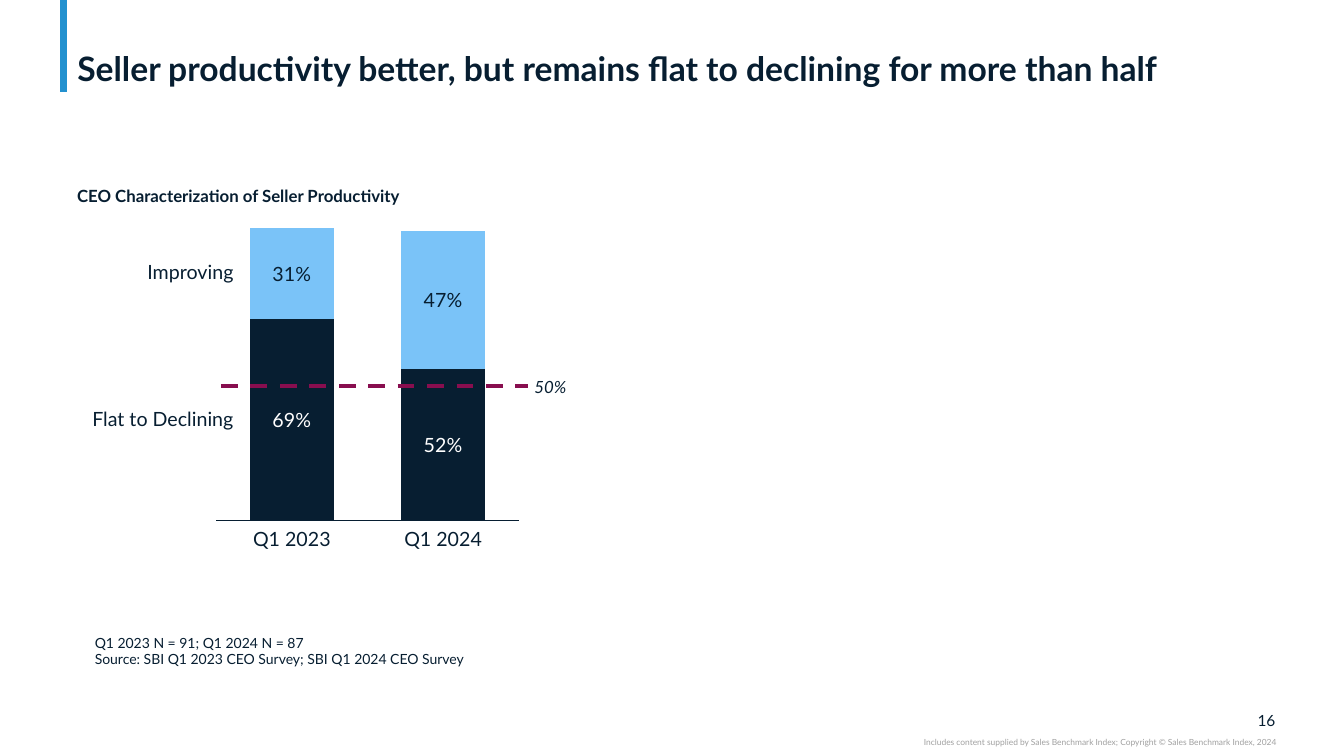
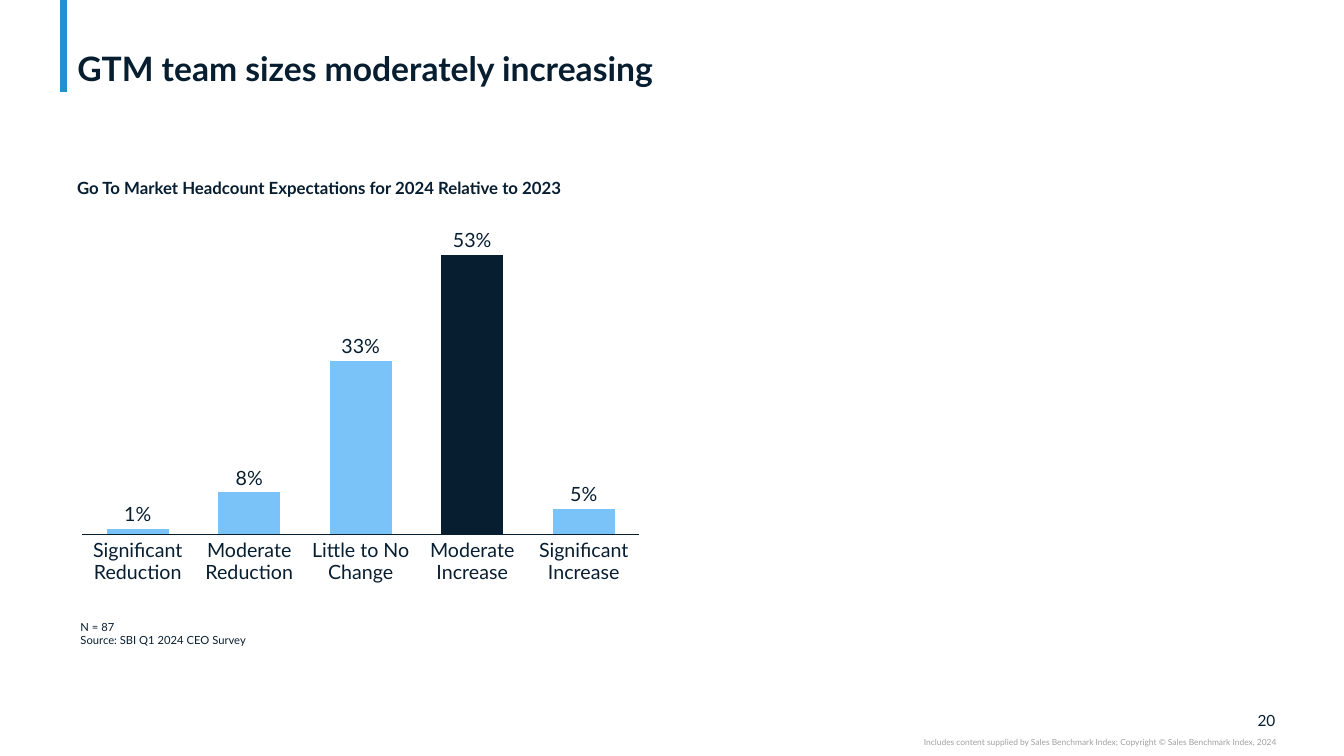
from lxml import etree
from pptx import Presentation, util as u
from pptx.chart import data as chart_data
from pptx.dml.color import RGBColor
from pptx.enum import chart as charts, dml, shapes, text
from pptx.oxml import ns

COLORS = {"ink": "071E31", "sky": "7AC3F8", "band": "2391CF",
          "target": "880E4F", "grey": "A0A0A0", "white": "FFFFFF"}
FONT = "Lato"
LEFT, CENTER, RIGHT = text.PP_ALIGN.LEFT, text.PP_ALIGN.CENTER, text.PP_ALIGN.RIGHT
TOP, MIDDLE, BOTTOM = (text.MSO_ANCHOR.TOP, text.MSO_ANCHOR.MIDDLE,
                       text.MSO_ANCHOR.BOTTOM)

# The slide is a grid of 80 columns and 45 rows of square cells
presentation = Presentation()
presentation.slide_width, presentation.slide_height = u.Inches(13.33), u.Inches(7.5)
CELL = presentation.slide_height / 45
title_layout = presentation.slide_layouts.get_by_name("Title Only")

LABEL = {"size": 14, "spacing": 0.9, "margins": (0, 0)}
HEADING = {"size": 12, "bold": True}


def write(shape, box, lines, size, color="ink", align=LEFT, anchor=TOP,
          margins=(0.1, 0.05), spacing=1.0, bold=False, italic=False):
    """Place a shape on the grid (column, row, columns, rows) and fill in its text."""
    for name, cells in zip(("left", "top", "width", "height"), box):
        setattr(shape, name, int(cells * CELL))
    frame = shape.text_frame
    side, end = (u.Inches(margin) for margin in margins)
    frame_format = {"word_wrap": True, "auto_size": text.MSO_AUTO_SIZE.NONE,
                    "vertical_anchor": anchor, "margin_left": side,
                    "margin_right": side, "margin_top": end, "margin_bottom": end}
    for name, value in frame_format.items():
        setattr(frame, name, value)
    frame.text = "\n".join(lines)
    for paragraph in frame.paragraphs:
        paragraph.alignment, paragraph.line_spacing = align, spacing
        paragraph.space_before = u.Pt(0)
        font = paragraph.runs[0].font
        font_format = {"name": FONT, "size": u.Pt(size), "bold": bold, "italic": italic}
        for name, value in font_format.items():
            setattr(font, name, value)
        font.color.rgb = RGBColor.from_string(COLORS[color])


def add_columns(slide, box, plot_area, categories, series):
    """Add a stacked column chart scaled to 100, with only its base line shown."""
    data = chart_data.CategoryChartData(number_format='0"%"')
    data.categories = categories
    for name, values, _ in series:
        data.add_series(name, values)
    chart = slide.shapes.add_chart(charts.XL_CHART_TYPE.COLUMN_STACKED,
                                   *(int(cells * CELL) for cells in box), data).chart
    chart.has_legend = chart.has_title = False
    chart.font.name, chart.font.size = FONT, u.Pt(10)
    chart.font.color.rgb = RGBColor.from_string(COLORS["ink"])

    value_axis, category_axis = chart.value_axis, chart.category_axis
    value_axis.minimum_scale, value_axis.maximum_scale = 0, 100
    value_axis.has_major_gridlines = value_axis.visible = False
    category_axis.tick_label_position = charts.XL_TICK_LABEL_POSITION.NONE
    category_axis.major_tick_mark = charts.XL_TICK_MARK.NONE
    category_axis.format.line.width = u.Pt(0.75)
    category_axis.format.line.color.rgb = RGBColor.from_string(COLORS["ink"])

    plot = chart.plots[0]
    plot.gap_width, plot.overlap, plot.vary_by_categories = 80, 100, False
    for column_series, (_, _, color) in zip(plot.series, series):
        column_series.format.fill.solid()
        column_series.format.fill.fore_color.rgb = RGBColor.from_string(COLORS[color])
        column_series.invert_if_negative = False

    # Fixed inner plot area, as shares of the chart
    area = chart._chartSpace.chart.plotArea
    for old_layout in area.findall(ns.qn("c:layout")):
        area.remove(old_layout)
    layout = etree.Element(ns.qn("c:layout"))
    manual = etree.SubElement(layout, ns.qn("c:manualLayout"))
    settings = [("layoutTarget", "inner"), ("xMode", "edge"), ("yMode", "edge")]
    for tag, value in settings + list(zip("xywh", plot_area)):
        etree.SubElement(manual, ns.qn("c:" + tag)).set("val", str(value))
    area.insert(0, layout)
    return plot


# Shared frame: title, band, page number and copyright line
slides = []
for title, page in (
        ("Seller productivity better, but remains flat to declining for more than half", "16"),
        ("GTM team sizes moderately increasing", "20")):
    slide = presentation.slides.add_slide(title_layout)
    slides.append(slide)
    write(slide.shapes.title, (4, 0.25, 72, 5.05), [title], 24, anchor=BOTTOM,
          margins=(0.1, 0), spacing=0.9, bold=True)
    write(slide.shapes.add_textbox(0, 0, 0, 0), (73.9, 42.3, 2, 1.15), [page], 11,
          align=RIGHT, anchor=MIDDLE, margins=(0, 0))
    write(slide.shapes.add_textbox(0, 0, 0, 0), (45, 43.9, 30.95, 0.6),
          ["Includes content supplied by Sales Benchmark Index; "
           "Copyright © Sales Benchmark Index, 2024"],
          6, color="grey", align=RIGHT, margins=(0, 0))
productivity, headcount = slides

# Seller productivity: heading and chart
write(productivity.shapes.add_textbox(0, 0, 0, 0), (4, 10.75, 28, 1.8),
      ["CEO Characterization of Seller Productivity"], **HEADING)
left, top, width, height = chart_box = (12.3, 11.65, 19.15, 21.5)
x, y, w, h = plot_area = (0.03, 0.09, 0.94, 0.81)
quarters = ["Q1 2023", "Q1 2024"]
declining, improving = (69, 52), (31, 47)
plot = add_columns(productivity, chart_box, plot_area, quarters,
                   [("Flat to Declining", declining, "ink"), ("Improving", improving, "sky")])
for column_series, color in zip(plot.series, ("white", "ink")):
    labels = column_series.data_labels
    label_format = {"show_value": True, "number_format": '0"%"',
                    "number_format_is_linked": False,
                    "position": charts.XL_LABEL_POSITION.CENTER}
    for name, value in label_format.items():
        setattr(labels, name, value)
    labels.font.name, labels.font.size = FONT, u.Pt(14)
    labels.font.color.rgb = RGBColor.from_string(COLORS[color])

# Seller productivity: quarter names below, series names beside the first column
column = width * w / len(quarters)
for index, quarter in enumerate(quarters):
    write(productivity.shapes.add_textbox(0, 0, 0, 0),
          (left + width * x + index * column, 31.5, column, 1.25), [quarter],
          align=CENTER, **LABEL)
base = top + height * (y + h)
for name, middle in (("Improving", declining[0] + improving[0] / 2),
                     ("Flat to Declining", declining[0] / 2)):
    write(productivity.shapes.add_textbox(0, 0, 0, 0),
          (3.9, base - height * h * middle / 100 - 0.63, 10, 1.25), [name],
          align=RIGHT, anchor=MIDDLE, **LABEL)

# Seller productivity: half mark and source
write(productivity.shapes.add_textbox(0, 0, 0, 0), (27.25, 22.1, 7.05, 1.8), ["50%"], 12,
      align=RIGHT, italic=True)
write(productivity.shapes.add_textbox(0, 0, 0, 0), (5.05, 37.45, 39.5, 2.65),
      ["Q1 2023 N = 91; Q1 2024 N = 87",
       "Source: SBI Q1 2023 CEO Survey; SBI Q1 2024 CEO Survey"], 10)

# Headcount: heading and chart
write(headcount.shapes.add_textbox(0, 0, 0, 0), (4, 10.3, 38, 1.8),
      ["Go To Market Headcount Expectations for 2024 Relative to 2023"], **HEADING)
left, top, width, height = chart_box = (4.2, 14.65, 34.2, 17.7)
x, y, w, h = plot_area = (0.02, 0.03, 0.97, 0.94)
expectations = [("Significant Reduction", 2, "1%"), ("Moderate Reduction", 15, "8%"),
                ("Little to No Change", 62, "33%"), ("Moderate Increase", 100, "53%"),
                ("Significant Increase", 9, "5%")]
names, lengths, _ = zip(*expectations)
plot = add_columns(headcount, chart_box, plot_area, names,
                   [("Expectation", lengths, "sky")])
largest = plot.series[0].points[lengths.index(max(lengths))].format.fill
largest.solid()
largest.fore_color.rgb = RGBColor.from_string(COLORS["ink"])

# Headcount: a name below and a share above each column
column = width * w / len(expectations)
base = top + height * (y + h)
for index, (name, length, share) in enumerate(expectations):
    center = left + width * x + (index + 0.5) * column
    write(headcount.shapes.add_textbox(0, 0, 0, 0), (center - 3, 32.2, 6, 2.5), [name],
          align=CENTER, **LABEL)
    write(headcount.shapes.add_textbox(0, 0, 0, 0),
          (center - 1.5, base - height * h * length / 100 - 1.45, 3, 1.25), [share],
          align=CENTER, anchor=BOTTOM, **LABEL)
write(headcount.shapes.add_textbox(0, 0, 0, 0), (4.2, 36.6, 24.5, 2.2),
      ["N = 87", "Source: SBI Q1 2024 CEO Survey"], 8)

# Lines: the band on every slide and the half mark over the first chart
band = ((3.8, 0), (3.8, 5.5), "band", 5, None)
half_mark = ((13.15, 23), (31.45, 23), "target", 3, dml.MSO_LINE.DASH)
for slide, (start, end, color, weight, dash) in (
        (productivity, band), (headcount, band), (productivity, half_mark)):
    line = slide.shapes.add_connector(shapes.MSO_CONNECTOR.STRAIGHT,
                                      *(int(cells * CELL) for cells in start + end))
    line.line.width, line.line.dash_style = u.Pt(weight), dash
    line.line.color.rgb = RGBColor.from_string(COLORS[color])
    etree.SubElement(line._element.spPr, ns.qn("a:effectLst"))

presentation.save("out.pptx")
